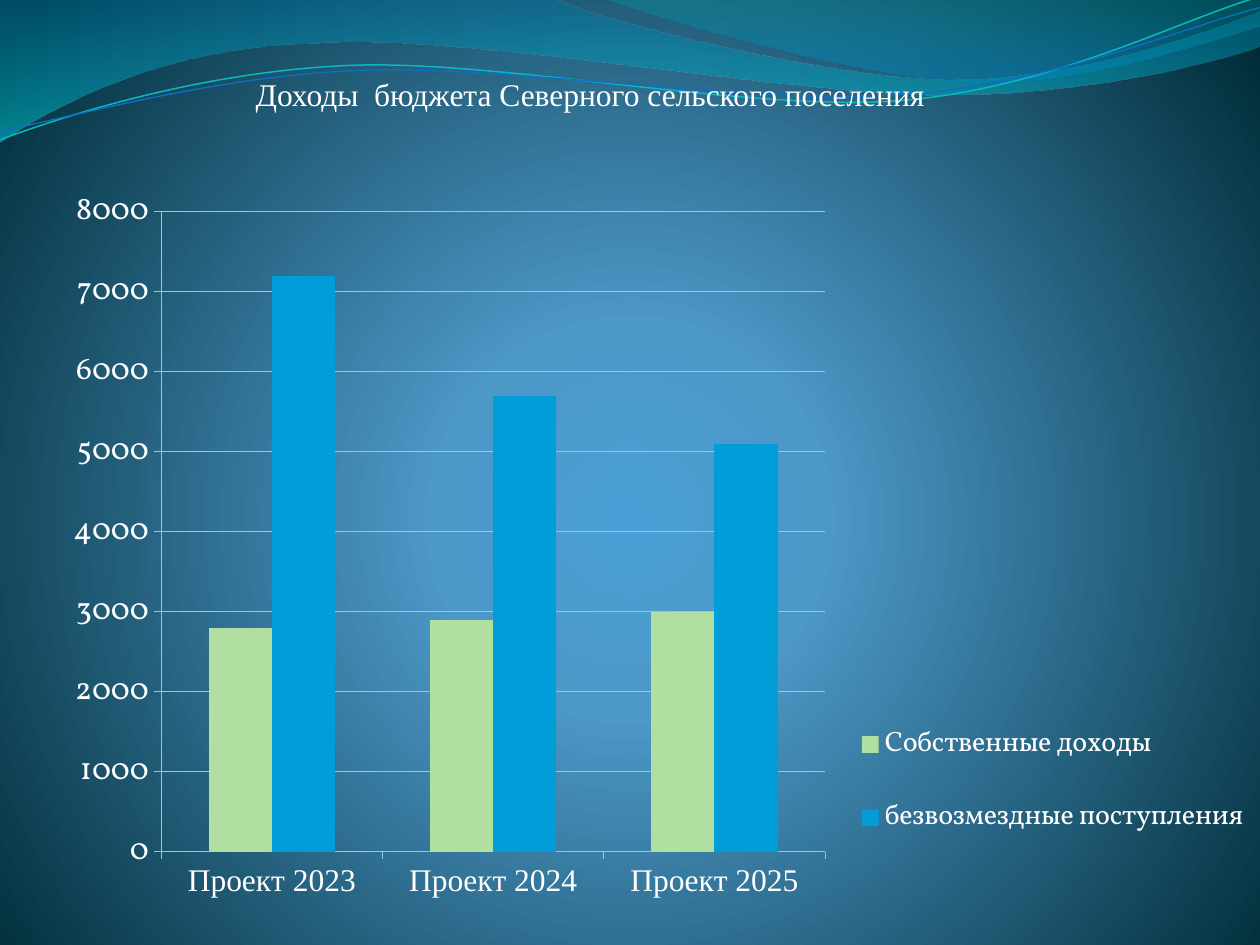
from math import cos, radians, sin

from lxml import etree
from pptx import Presentation
from pptx.chart.data import CategoryChartData
from pptx.dml.color import RGBColor
from pptx.enum.chart import XL_CHART_TYPE, XL_LEGEND_POSITION, XL_TICK_MARK
from pptx.enum.text import MSO_AUTO_SIZE, PP_ALIGN
from pptx.oxml import parse_xml
from pptx.oxml.ns import qn
from pptx.util import Inches, Pt

COLUMNS = XL_CHART_TYPE.COLUMN_CLUSTERED
LEGEND_RIGHT = XL_LEGEND_POSITION.RIGHT
TICK_OUT = XL_TICK_MARK.OUTSIDE
CENTER = PP_ALIGN.CENTER
FIT_SHAPE = MSO_AUTO_SIZE.SHAPE_TO_FIT_TEXT

# Content
TITLE = "Доходы  бюджета Северного сельского поселения"
YEARS = ["Проект 2023", "Проект 2024", "Проект 2025"]
SERIES = [
    ("Собственные доходы", [2800, 2900, 3000], "B0DFA1"),
    ("безвозмездные поступления", [7200, 5700, 5100], "009DD9"),
]

THEME = {
    "text": "FFFFFF", "grid": "85CDEC",
    "title_font": "Times New Roman", "chart_font": "Vollkorn",
    "size": 18, "legend_size": 16,
    # Gradient stops: position %, colour, opacity %
    "background": [(0, "4AA0D6", 100), (25, "4C98C7", 100), (100, "002C38", 100)],
    "wide_wave": [(0, "0074A1", 45), (100, "00C6CF", 55)],
    "right_wave": [(0, "00A1A9", 30), (80, "008BBF", 45)],
}
LINEAR_DOWN = '<a:lin ang="5400000" scaled="0"/>'
RADIAL = ('<a:path path="circle"><a:fillToRect l="10000" t="110000" '
          'r="10000" b="100000"/></a:path>')

# Places in inches: left, top, width, height
CHART = (0.39, 1.39, 9.61, 5.86)
PLOT = (1.28, 1.68, 5.27, 5.08)
LEGEND = (6.77, 5.48, 3.17, 1.44)
TITLE_BOX = (0.31, 0.55, 8.75, 0.4)

# Waves: a step of 2 numbers is straight, one of 6 is a Bezier curve
FILLED_WAVES = [
    ("wide_wave", [(0, 0), (4.4, -0.01), (4.76, 0.17, 6.64, 0.63, 7.58, 0.63),
                   (8.53, 0.63, 9.58, 0.26, 10, 0.09), (10.01, 0.36),
                   (9.83, 0.44, 8.7, 0.76, 7.46, 0.75),
                   (6.22, 0.75, 3.82, 0.28, 2.57, 0.34),
                   (1.29, 0.36, 0.46, 0.83, -0.01, 1.13)]),
    ("right_wave", [(4.79, -0.01), (5.09, 0.11, 6.82, 0.62, 7.69, 0.65),
                    (8.56, 0.69, 9.61, 0.32, 10, 0.21), (10, 0)]),
]
LINE_WAVES = [
    ("0AB8BF", 0.85, [(0, 1.11), (0.48, 0.93, 1.58, 0.57, 2.77, 0.52),
                      (3.95, 0.47, 5.93, 0.89, 7.13, 0.8),
                      (8.33, 0.71, 9.38, 0.15, 9.98, -0.02)]),
    ("0F6FC6", 0.75, [(0, 1.04), (0.47, 0.96, 1.64, 0.61, 2.83, 0.56),
                      (4.03, 0.51, 5.97, 0.84, 7.17, 0.75),
                      (8.36, 0.67, 9.41, 0.21, 10, 0.06)]),
]
LINE_TILT = -2.7
LINE_CENTER = (5, 0.58)


def color(value):
    return RGBColor.from_string(value)


def set_gradient(parent, stops, direction):
    """Replace the solid fill of an element by a gradient."""
    marks = "".join(
        f'<a:gs pos="{pos * 1000}"><a:srgbClr val="{value}">'
        f'<a:alpha val="{opacity * 1000}"/></a:srgbClr></a:gs>'
        for pos, value, opacity in stops)
    gradient = parse_xml(
        '<a:gradFill xmlns:a="http://schemas.openxmlformats.org/drawingml/2006/main" '
        f'rotWithShape="1"><a:gsLst>{marks}</a:gsLst>{direction}</a:gradFill>')
    parent.replace(parent.find(qn("a:solidFill")), gradient)


def turn(point, degrees):
    """Turn a point about the middle of the line waves."""
    angle = radians(degrees)
    x, y = point[0] - LINE_CENTER[0], point[1] - LINE_CENTER[1]
    return (LINE_CENTER[0] + x * cos(angle) - y * sin(angle),
            LINE_CENTER[1] + x * sin(angle) + y * cos(angle))


def add_wave(shapes, steps, close, tilt=0):
    """Draw the end points as a freeform, then bend the curved steps."""
    steps = [[tuple(Inches(v) for v in turn(step[i:i + 2], -tilt))
              for i in range(0, len(step), 2)] for step in steps]
    ends = [step[-1] for step in steps]
    builder = shapes.build_freeform(*ends[0])
    builder.add_line_segments(ends[1:], close=close)
    wave = builder.convert_to_shape()
    wave.shadow.inherit = False
    left, top = (min(values) for values in zip(*ends))
    for line, step in zip(list(wave.element.iter(qn("a:lnTo"))), steps[1:]):
        if len(step) == 1:
            continue
        line.tag = qn("a:cubicBezTo")
        for index, (x, y) in enumerate(step[:-1]):
            handle = etree.Element(qn("a:pt"), x=str(x - left), y=str(y - top))
            line.insert(index, handle)
    wave.rotation = tilt
    return wave


def style_font(font, name, size):
    font.name = name
    font.size = Pt(size)
    font.color.rgb = color(THEME["text"])


def place(parent, area, inner=False):
    """Give a chart part a fixed place within the chart."""
    for old in parent.findall(qn("c:layout")):
        parent.remove(old)
    left, top, width, height = CHART
    x, y, w, h = area
    layout = etree.Element(qn("c:layout"))
    manual = etree.SubElement(layout, qn("c:manualLayout"))
    settings = [("layoutTarget", "inner")] if inner else []
    settings += [("xMode", "edge"), ("yMode", "edge"), ("x", (x - left) / width),
                 ("y", (y - top) / height), ("w", w / width), ("h", h / height)]
    for tag, value in settings:
        etree.SubElement(manual, qn("c:" + tag)).set("val", str(value))
    parent.insert(0 if inner else 1, layout)


def add_income_chart(page):
    data = CategoryChartData()
    data.categories = YEARS
    for name, values, _ in SERIES:
        data.add_series(name, values)
    chart = page.shapes.add_chart(COLUMNS, *map(Inches, CHART), data).chart
    chart.has_title = False
    style_font(chart.font, THEME["chart_font"], THEME["size"])

    plot = chart.plots[0]
    plot.gap_width = 150
    plot.overlap = 0
    plot.vary_by_categories = False
    for series, (_, _, value) in zip(plot.series, SERIES):
        series.format.fill.solid()
        series.format.fill.fore_color.rgb = color(value)

    # Axes
    values_axis = chart.value_axis
    values_axis.minimum_scale, values_axis.maximum_scale = 0, 8000
    values_axis.major_unit = 1000
    values_axis.has_major_gridlines = True
    for axis, font in ((chart.category_axis, THEME["title_font"]),
                       (values_axis, THEME["chart_font"])):
        axis.major_tick_mark = TICK_OUT
        style_font(axis.tick_labels.font, font, THEME["size"])
    for part in (chart.category_axis, values_axis, values_axis.major_gridlines):
        part.format.line.color.rgb = color(THEME["grid"])
        part.format.line.width = Pt(0.5)

    # Legend and fixed layout
    chart.has_legend = True
    chart.legend.position = LEGEND_RIGHT
    chart.legend.include_in_layout = False
    style_font(chart.legend.font, THEME["chart_font"], THEME["legend_size"])
    area = chart.element.find(qn("c:chart"))
    place(area.find(qn("c:plotArea")), PLOT, inner=True)
    place(area.find(qn("c:legend")), LEGEND)


def add_title(page):
    box = page.shapes.add_textbox(*map(Inches, TITLE_BOX))
    box.text_frame.word_wrap = True
    box.text_frame.auto_size = FIT_SHAPE
    para = box.text_frame.paragraphs[0]
    para.alignment = CENTER
    span = para.add_run()
    span.text = TITLE
    style_font(span.font, THEME["title_font"], THEME["size"])


def main():
    deck = Presentation()
    deck.slide_width, deck.slide_height = Inches(10), Inches(7.5)
    page = deck.slides.add_slide(deck.slide_layouts[6])

    # Background
    page.background.fill.solid()
    set_gradient(page.element.find(".//" + qn("p:bgPr")), THEME["background"], RADIAL)

    # Waves along the top
    for name, steps in FILLED_WAVES:
        wave = add_wave(page.shapes, steps, close=True)
        wave.line.fill.background()
        wave.fill.solid()
        set_gradient(wave.element.spPr, THEME[name], LINEAR_DOWN)
    lines = page.shapes.add_group_shape()
    for value, width, steps in LINE_WAVES:
        wave = add_wave(lines.shapes, steps, close=False, tilt=LINE_TILT)
        wave.fill.background()
        wave.line.color.rgb = color(value)
        wave.line.width = Pt(width)

    add_income_chart(page)
    add_title(page)
    deck.save("out.pptx")


if __name__ == "__main__":
    main()
